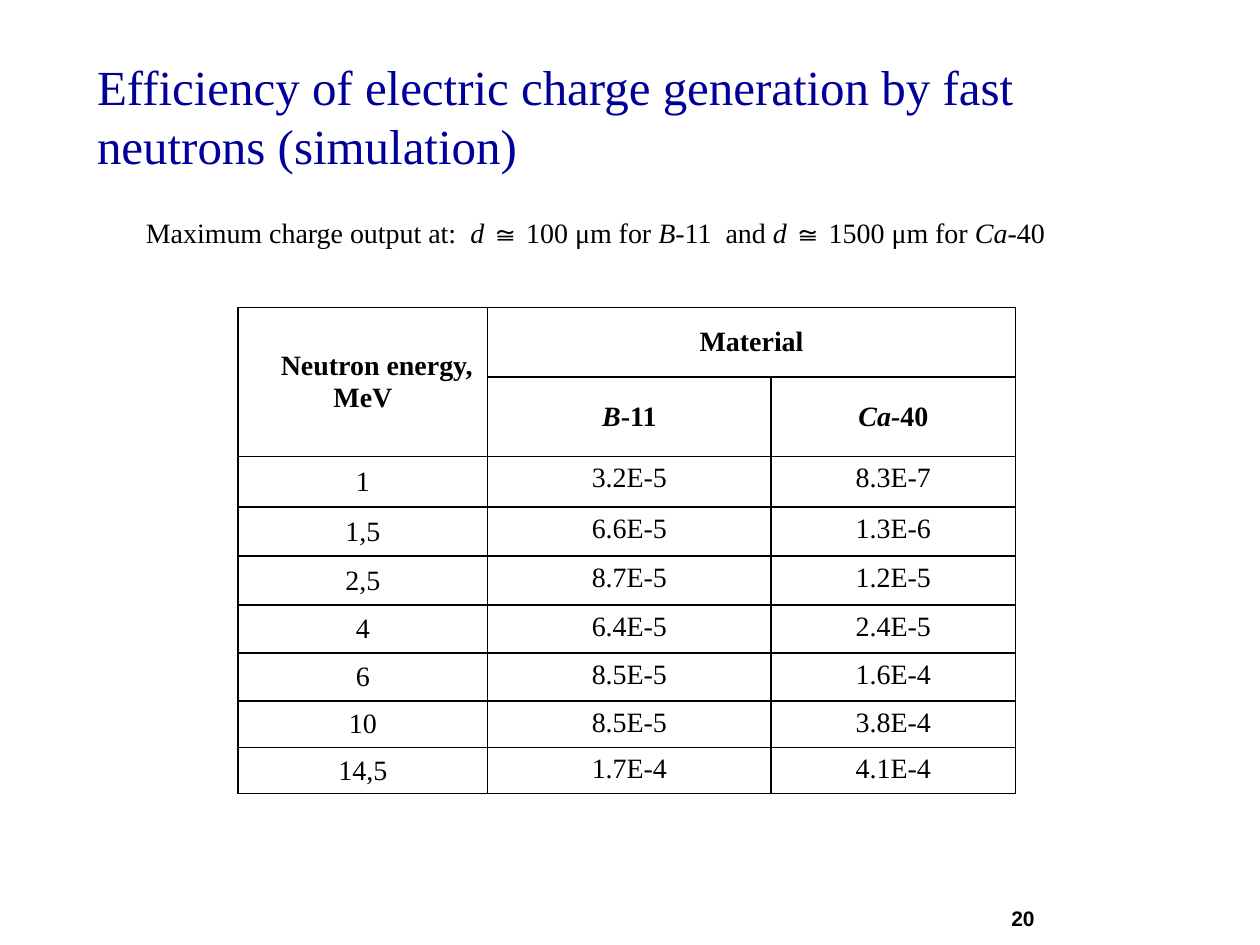
import pptx
import pptx.dml.color
import pptx.enum.text
import pptx.oxml
import pptx.oxml.ns
import pptx.util
from pptx.util import Inches

COLORS = {"title": "000099", "text": "000000", "background": "FFFFFF"}
SERIF = "Times New Roman"
ALIGN = pptx.enum.text.PP_ALIGN
ANCHOR = pptx.enum.text.MSO_ANCHOR
COLUMN_WIDTHS = [1.98, 2.25, 1.94]
ROW_HEIGHTS = [0.55, 0.55, 0.4, 0.39, 0.39, 0.38, 0.38, 0.37, 0.36]
CHARGE_ROWS = [
    ("1", "3.2E-5", "8.3E-7"),
    ("1,5", "6.6E-5", "1.3E-6"),
    ("2,5", "8.7E-5", "1.2E-5"),
    ("4", "6.4E-5", "2.4E-5"),
    ("6", "8.5E-5", "1.6E-4"),
    ("10", "8.5E-5", "3.8E-4"),
    ("14,5", "1.7E-4", "4.1E-4"),
]


def rgb(name):
    """Return the named colour."""
    return pptx.dml.color.RGBColor.from_string(COLORS[name])


def write(paragraph, parts, size=16, color="text", font=SERIF, bold=False, align=ALIGN.LEFT):
    """Write parts into a paragraph, with italics for parts marked by a leading asterisk."""
    paragraph.alignment = align
    paragraph.font.name = font
    paragraph.font.size = pptx.util.Pt(size)
    paragraph.font.bold = bold
    paragraph.font.color.rgb = rgb(color)
    for part in parts:
        run = paragraph.add_run()
        run.text = part.removeprefix("*")
        if part.startswith("*"):
            run.font.italic = True


def add_title(slide, text):
    """Place and fill the title placeholder."""
    title = slide.shapes.title
    title.left, title.top = Inches(0.67), Inches(0.4)
    title.width, title.height = Inches(8.5), Inches(1.25)
    title.text_frame.vertical_anchor = ANCHOR.TOP
    write(title.text_frame.paragraphs[0], [text], size=28, color="title")


def add_text(slide, left, top, width, height, parts, wrap=True, **style):
    """Add a one-paragraph text box."""
    box = slide.shapes.add_textbox(Inches(left), Inches(top), Inches(width), Inches(height))
    box.text_frame.word_wrap = wrap
    if not wrap:
        box.text_frame.auto_size = pptx.enum.text.MSO_AUTO_SIZE.SHAPE_TO_FIT_TEXT
    write(box.text_frame.paragraphs[0], parts, **style)


def outline_cell(cell):
    """Give a cell a plain fill and thin borders on all sides."""
    cell.fill.solid()
    cell.fill.fore_color.rgb = rgb("background")
    properties = cell._tc.get_or_add_tcPr()
    for index, side in enumerate(("lnL", "lnR", "lnT", "lnB")):
        border = pptx.oxml.parse_xml(
            f'<a:{side} {pptx.oxml.ns.nsdecls("a")} w="12700"><a:solidFill>'
            f'<a:srgbClr val="{COLORS["text"]}"/></a:solidFill></a:{side}>'
        )
        properties.insert(index, border)


def fill_cell(cell, parts, bold=False, anchor=ANCHOR.MIDDLE):
    """Write centred text into a cell."""
    cell.vertical_anchor = anchor
    write(cell.text_frame.paragraphs[0], parts, bold=bold, align=ALIGN.CENTER)


def add_charge_table(slide):
    """Add the table of charge output by neutron energy and material."""
    frame = slide.shapes.add_table(
        len(ROW_HEIGHTS), len(COLUMN_WIDTHS), Inches(1.89), Inches(2.44),
        Inches(sum(COLUMN_WIDTHS)), Inches(sum(ROW_HEIGHTS)),
    )
    table = frame.table
    for column, width in zip(table.columns, COLUMN_WIDTHS):
        column.width = Inches(width)
    for row, height in zip(table.rows, ROW_HEIGHTS):
        row.height = Inches(height)
    for cell in table.iter_cells():
        outline_cell(cell)
    energy, material = table.cell(0, 0), table.cell(0, 1)
    energy.merge(table.cell(1, 0))
    material.merge(table.cell(0, 2))
    energy.text_frame.paragraphs[0]._p.get_or_add_pPr().set("indent", str(Inches(0.22)))
    fill_cell(energy, ["Neutron energy, MeV"], bold=True)
    fill_cell(material, ["Material"], bold=True)
    fill_cell(table.cell(1, 1), ["*B", "-11"], bold=True)
    fill_cell(table.cell(1, 2), ["*Ca-", "40"], bold=True)
    for row, values in enumerate(CHARGE_ROWS, start=2):
        for column, value in enumerate(values):
            anchor = ANCHOR.TOP if column else ANCHOR.MIDDLE
            fill_cell(table.cell(row, column), [value], anchor=anchor)


def main():
    """Build and save the slide."""
    presentation = pptx.Presentation()
    presentation.slide_width, presentation.slide_height = Inches(10), Inches(7.5)
    slide = presentation.slides.add_slide(presentation.slide_layouts[5])
    add_title(slide, "Efficiency of electric charge generation by fast neutrons (simulation)")
    add_text(
        slide, 1.06, 1.66, 7.55, 0.37,
        ["Maximum charge output at:  ", "*d ", "≅ 100 μm for ", "*В", "-11  and ",
         "*d ", "≅ 1500 μm for ", "*Са", "-40"],
        wrap=False,
    )
    add_charge_table(slide)
    add_text(slide, 7.76, 7.14, 0.55, 0.36, ["20"], size=12, font="Arial", bold=True, align=ALIGN.RIGHT)
    presentation.save("out.pptx")


if __name__ == "__main__":
    main()
